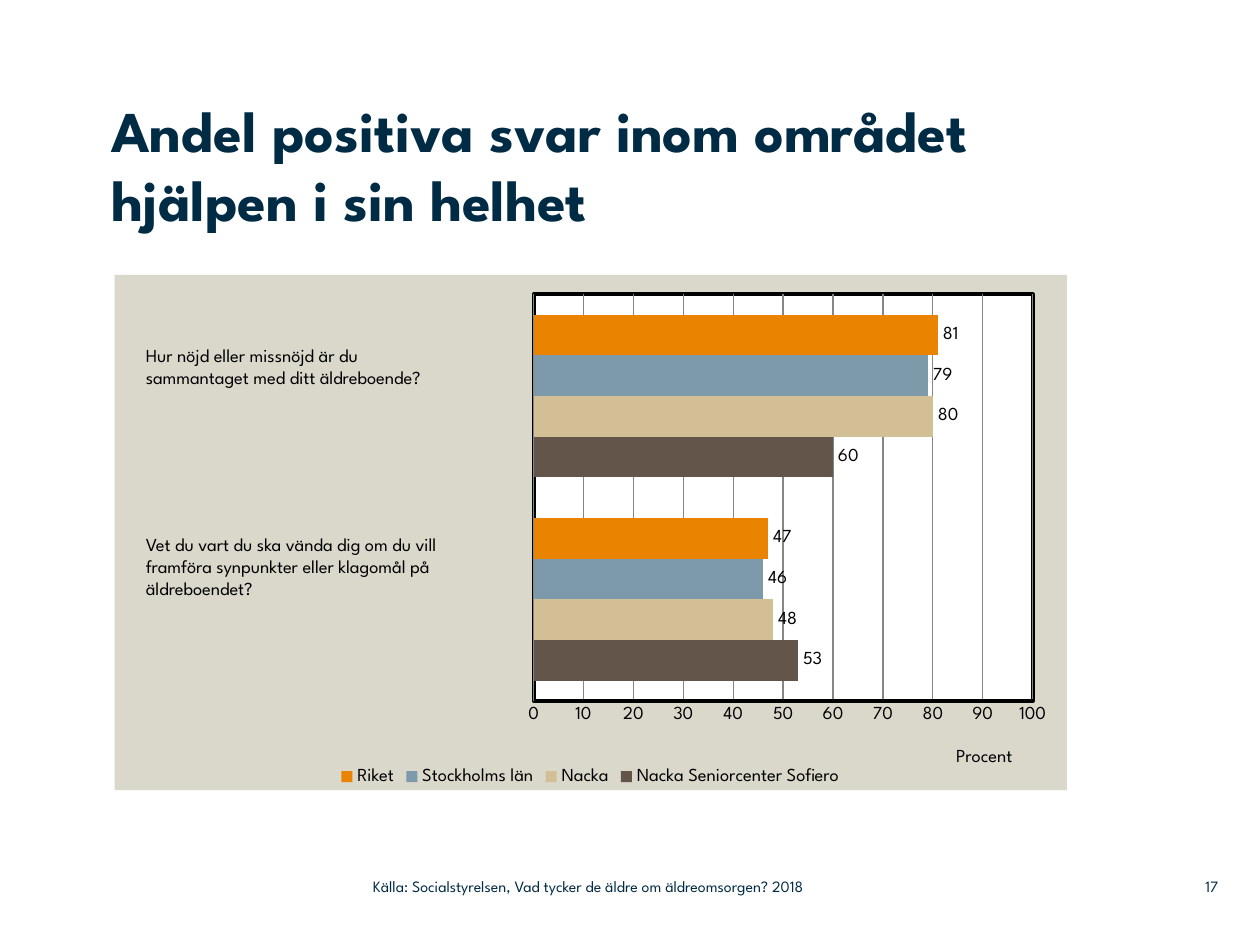
"""Build the slide on positive answers about care as a whole."""
from dataclasses import dataclass

import pptx
import pptx.chart.data
import pptx.dml.color
import pptx.enum.chart
import pptx.enum.text
import pptx.oxml
import pptx.oxml.ns
import pptx.util
from pptx.util import Cm, Pt

FONT = "League Spartan"
NAVY = "002B45"
BLACK = "000000"
ALIGN = pptx.enum.text.PP_ALIGN
ANCHOR = pptx.enum.text.MSO_ANCHOR


@dataclass
class Series:
    name: str
    values: tuple[int, ...]
    color: str


@dataclass
class Note:
    lines: tuple[str, ...]
    box: tuple[float, float, float, float]
    size: float = 10.5
    color: str = BLACK
    inset: bool = True
    anchor: ANCHOR = ANCHOR.TOP
    align: ALIGN = ALIGN.LEFT


SERIES = [
    Series("Nacka Seniorcenter Sofiero", (53, 60), "635549"),
    Series("Nacka", (48, 80), "D3BF96"),
    Series("Stockholms län", (46, 79), "7D9AAA"),
    Series("Riket", (47, 81), "E98300"),
]
FOOTER = dict(size=9, color=NAVY, inset=False, anchor=ANCHOR.MIDDLE)
NOTES = [
    Note(("Hur nöjd eller missnöjd är du", "sammantaget med ditt äldreboende?"),
         (2.69, 6.81, 7.57, 1.14)),
    Note(("Vet du vart du ska vända dig om du vill framföra synpunkter "
          "eller klagomål på äldreboendet?",), (2.69, 10.62, 7.54, 1.6)),
    Note(("17",), (23.37, 17.5, 1.19, 0.74), align=ALIGN.RIGHT, **FOOTER),
    Note(("Källa: Socialstyrelsen, Vad tycker de äldre om äldreomsorgen? 2018",),
         (7.52, 17.5, 11.25, 0.74), **FOOTER),
]


def rgb(color: str) -> pptx.dml.color.RGBColor:
    return pptx.dml.color.RGBColor.from_string(color)


def set_fill(fmt, color: str) -> None:
    fmt.fill.solid()
    fmt.fill.fore_color.rgb = rgb(color)


def set_line(fmt, color: str, width: float) -> None:
    fmt.line.color.rgb = rgb(color)
    fmt.line.width = Pt(width)


def set_font(font, size: float, color: str, bold: bool = False) -> None:
    font.name, font.size, font.bold = FONT, Pt(size), bold
    font.color.rgb = rgb(color)


def clear_insets(tf) -> None:
    tf.margin_left = tf.margin_top = tf.margin_right = tf.margin_bottom = 0


def add_run(p, text: str, size: float, color: str, bold: bool = False) -> None:
    r = p.add_run()
    r.text = text
    set_font(r.font, size, color, bold)


def add_title(s, text: str) -> None:
    sp = s.shapes.title
    sp.left, sp.top, sp.width, sp.height = map(Cm, (2.24, 1.91, 19.3, 3.61))
    tf = sp.text_frame
    tf.auto_size = pptx.enum.text.MSO_AUTO_SIZE.NONE
    tf.word_wrap = True
    tf.vertical_anchor = ANCHOR.TOP
    clear_insets(tf)
    p = tf.paragraphs[0]
    p.alignment = ALIGN.LEFT
    add_run(p, text, 33, NAVY, True)


def add_note(s, note: Note) -> None:
    tf = s.shapes.add_textbox(*map(Cm, note.box)).text_frame
    tf.word_wrap = True
    tf.vertical_anchor = note.anchor
    if not note.inset:
        clear_insets(tf)
    for i, line in enumerate(note.lines):
        p = tf.add_paragraph() if i else tf.paragraphs[0]
        p.alignment = note.align
        add_run(p, line, note.size, note.color)


def manual_layout(**values):
    """Return a chart layout element with its children in schema order."""
    tags = ("layoutTarget", "xMode", "yMode", "x", "y", "w", "h")
    body = "".join(f'<c:{t} val="{values[t]}"/>' for t in tags if t in values)
    return pptx.oxml.parse_xml(
        f'<c:layout {pptx.oxml.ns.nsdecls("c")}><c:manualLayout>{body}'
        "</c:manualLayout></c:layout>")


def format_plot_area(chart) -> None:
    area = chart._chartSpace.chart.plotArea
    for old in area.findall(pptx.oxml.ns.qn("c:layout")):
        area.remove(old)
    area.insert(0, manual_layout(layoutTarget="inner", xMode="edge", yMode="edge",
                                 x=0.44, y=0.038, w=0.524, h=0.789))
    area.append(shape_properties("FFFFFF", Pt(2.25)))
    chart._chartSpace.chart.addnext(shape_properties("DAD7CB"))


def shape_properties(fill: str, width: int = 0):
    color = '<a:solidFill><a:srgbClr val="{}"/></a:solidFill>'
    line = color.format(BLACK) if width else "<a:noFill/>"
    return pptx.oxml.parse_xml(
        f'<c:spPr {pptx.oxml.ns.nsdecls("c", "a")}>{color.format(fill)}'
        f'<a:ln w="{int(width)}">{line}</a:ln></c:spPr>')


def format_value_axis(axis) -> None:
    axis.minimum_scale, axis.maximum_scale, axis.major_unit = 0, 100, 10
    axis.major_tick_mark = axis.minor_tick_mark = pptx.enum.chart.XL_TICK_MARK.NONE
    axis.has_major_gridlines = True
    set_line(axis.major_gridlines.format, "868686", 0.75)
    set_line(axis.format, BLACK, 2)
    set_font(axis.tick_labels.font, 10.5, BLACK)
    title = axis.axis_title
    add_run(title.text_frame.paragraphs[0], "Procent", 10.5, BLACK)
    el = title._element
    for old in el.findall(pptx.oxml.ns.qn("c:layout")):
        el.remove(old)
    el.find(pptx.oxml.ns.qn("c:tx")).addnext(
        manual_layout(xMode="edge", yMode="edge", x=0.88, y=0.91))


def add_chart(s, series: list[Series]) -> None:
    data = pptx.chart.data.CategoryChartData()
    data.categories = ["1", "2"]
    for item in series:
        data.add_series(item.name, item.values)
    chart = s.shapes.add_chart(pptx.enum.chart.XL_CHART_TYPE.BAR_CLUSTERED,
                               *map(Cm, (2.31, 5.54, 19.2, 10.39)), data).chart
    set_font(chart.font, 10.5, BLACK)
    chart.has_title = False
    chart.has_legend = True
    chart.legend.position = pptx.enum.chart.XL_LEGEND_POSITION.BOTTOM
    chart.legend.include_in_layout = False
    set_font(chart.legend.font, 10.5, BLACK)
    chart.category_axis.visible = False
    format_value_axis(chart.value_axis)
    plot = chart.plots[0]
    plot.gap_width, plot.overlap, plot.vary_by_categories = 100, 0, False
    for ser, item in zip(plot.series, series):
        set_fill(ser.format, item.color)
        labels = ser.data_labels
        labels.show_value = True
        labels.position = pptx.enum.chart.XL_LABEL_POSITION.OUTSIDE_END
        set_font(labels.font, 10.5, BLACK)
    format_plot_area(chart)


def main() -> None:
    prs = pptx.Presentation()
    prs.slide_width, prs.slide_height = Cm(25.4), Cm(19.05)
    s = prs.slides.add_slide(prs.slide_layouts.get_by_name("Title Only"))
    add_chart(s, SERIES)
    add_title(s, "Andel positiva svar inom området hjälpen i sin helhet")
    for note in NOTES:
        add_note(s, note)
    prs.save("out.pptx")


if __name__ == "__main__":
    main()
